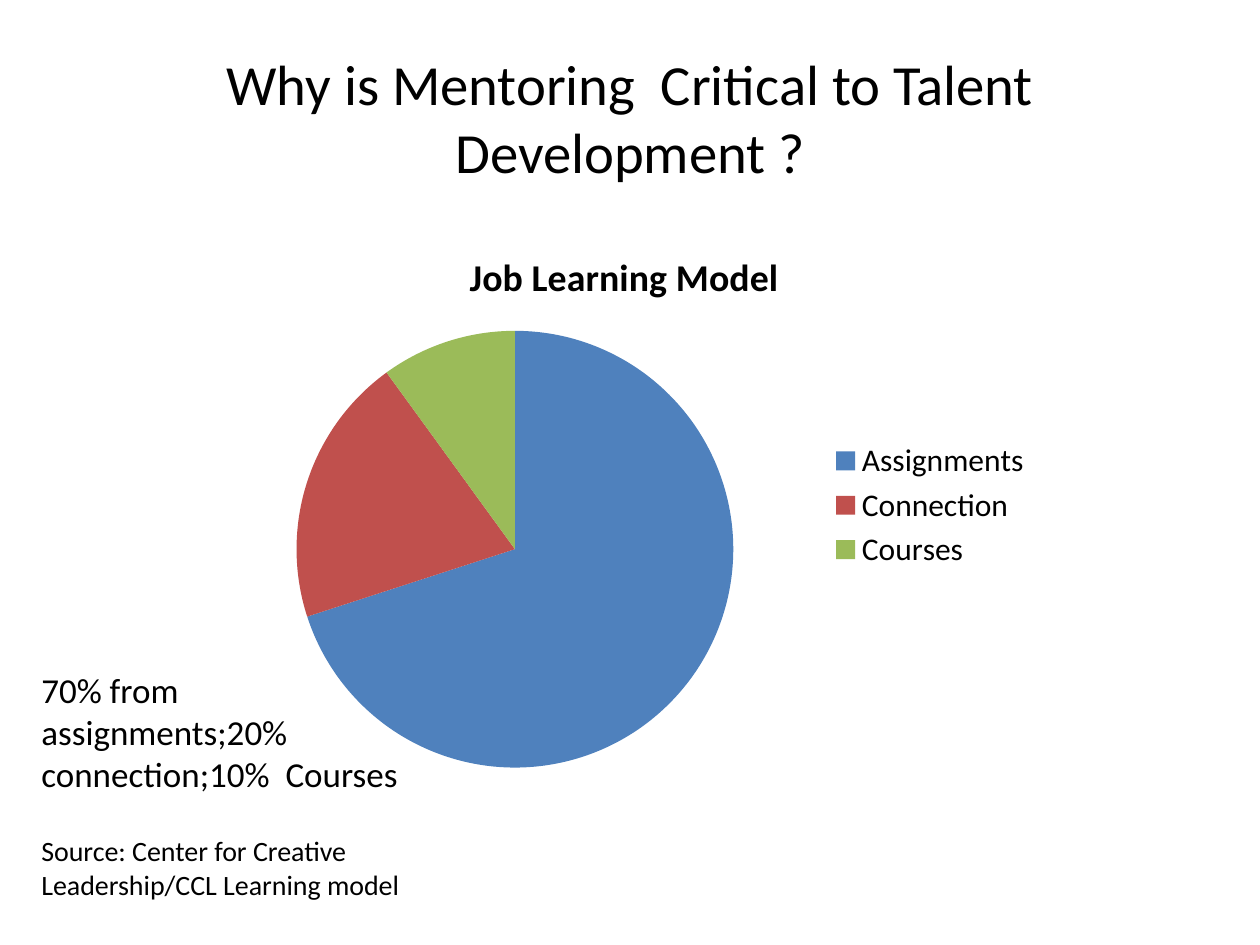
import pptx
import pptx.chart.data
import pptx.dml.color
import pptx.enum.chart
import pptx.enum.text
import pptx.util

EMU_PER_PX = 9144
FONT = "Calibri"
COLORS = {
    "background": "FFFFFF",
    "text": "000000",
    "Assignments": "4F81BD",
    "Connection": "C0504D",
    "Courses": "9BBB59",
}
LEARNING_SHARES = {"Assignments": 70, "Connection": 20, "Courses": 10}


def px(*lengths):
    return [pptx.util.Emu(length * EMU_PER_PX) for length in lengths]


def color(name):
    return pptx.dml.color.RGBColor.from_string(COLORS[name])


def format_font(font, size, bold=False):
    font.name = FONT
    font.size = pptx.util.Pt(size)
    font.bold = bold
    font.color.rgb = color("text")


def format_title(slide, text, box):
    title = slide.shapes.title
    title.left, title.top, title.width, title.height = px(*box)
    text_frame = title.text_frame
    text_frame.text = text
    text_frame.word_wrap = True
    text_frame.auto_size = pptx.enum.text.MSO_AUTO_SIZE.NONE
    text_frame.vertical_anchor = pptx.enum.text.MSO_ANCHOR.MIDDLE
    paragraph = text_frame.paragraphs[0]
    paragraph.alignment = pptx.enum.text.PP_ALIGN.CENTER
    format_font(paragraph.runs[0].font, 32.4)


def add_notes_box(slide, lines, box):
    text_frame = slide.shapes.add_textbox(*px(*box)).text_frame
    text_frame.word_wrap = True
    text_frame.auto_size = pptx.enum.text.MSO_AUTO_SIZE.SHAPE_TO_FIT_TEXT
    text_frame.text = "\n".join(text for text, size, space in lines)
    for paragraph, (text, size, space) in zip(text_frame.paragraphs, lines):
        paragraph.space_before = pptx.util.Pt(space)
        format_font(paragraph.runs[0].font, size)


def add_pie(slide, name, shares, box):
    data = pptx.chart.data.CategoryChartData()
    data.categories = list(shares)
    data.add_series(name, list(shares.values()))
    chart = slide.shapes.add_chart(
        pptx.enum.chart.XL_CHART_TYPE.PIE, *px(*box), data
    ).chart
    format_font(chart.font, 18)

    chart.has_title = True
    title_frame = chart.chart_title.text_frame
    title_frame.text = name
    format_font(title_frame.paragraphs[0].runs[0].font, 21.6, bold=True)
    chart.chart_title.include_in_layout = False

    chart.has_legend = True
    chart.legend.position = pptx.enum.chart.XL_LEGEND_POSITION.RIGHT
    chart.legend.include_in_layout = False
    format_font(chart.legend.font, 18)

    plot = chart.plots[0]
    plot.vary_by_categories = True
    for index, category in enumerate(shares):
        fill = plot.series[0].points[index].format.fill
        fill.solid()
        fill.fore_color.rgb = color(category)


def main():
    presentation = pptx.Presentation()
    presentation.slide_width, presentation.slide_height = px(1000, 750)
    slide = presentation.slides.add_slide(presentation.slide_layouts[5])
    slide.background.fill.solid()
    slide.background.fill.fore_color.rgb = color("background")

    format_title(
        slide,
        "Why is Mentoring  Critical to Talent Development ?",
        (50, 30, 900, 125),
    )
    add_notes_box(
        slide,
        [
            ("70% from assignments;20% connection;10%  Courses", 20, 0),
            ("Source: Center for Creative Leadership/CCL Learning model", 16, 22),
        ],
        (23, 526, 306, 195),
    )
    add_pie(slide, "Job Learning Model", LEARNING_SHARES, (162, 179, 667, 444))
    presentation.save("out.pptx")


if __name__ == "__main__":
    main()
